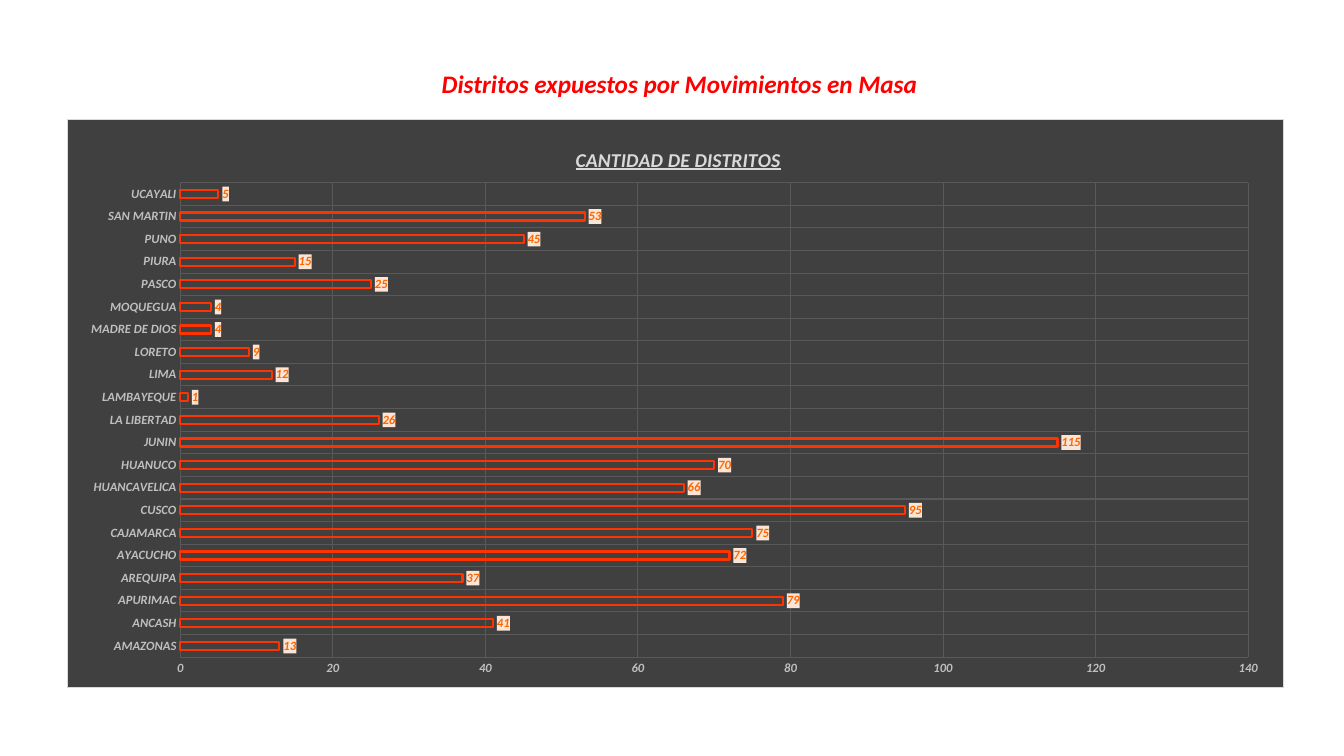
from dataclasses import dataclass

from lxml import etree
from pptx import Presentation
from pptx.chart.data import CategoryChartData
from pptx.dml.color import RGBColor
from pptx.enum.chart import XL_CHART_TYPE, XL_LABEL_POSITION, XL_TICK_MARK
from pptx.enum.text import MSO_ANCHOR, PP_ALIGN
from pptx.oxml import parse_xml
from pptx.oxml.ns import nsdecls, qn
from pptx.util import Cm, Pt

BAR = XL_CHART_TYPE.BAR_CLUSTERED
OUTSIDE_END = XL_LABEL_POSITION.OUTSIDE_END
NO_TICK = XL_TICK_MARK.NONE
MIDDLE = MSO_ANCHOR.MIDDLE
CENTER = PP_ALIGN.CENTER
TITLE_ONLY = 5

DISTRICTS = {
    "AMAZONAS": 13, "ANCASH": 41, "APURIMAC": 79, "AREQUIPA": 37,
    "AYACUCHO": 72, "CAJAMARCA": 75, "CUSCO": 95, "HUANCAVELICA": 66,
    "HUANUCO": 70, "JUNIN": 115, "LA LIBERTAD": 26, "LAMBAYEQUE": 1,
    "LIMA": 12, "LORETO": 9, "MADRE DE DIOS": 4, "MOQUEGUA": 4,
    "PASCO": 25, "PIURA": 15, "PUNO": 45, "SAN MARTIN": 53, "UCAYALI": 5,
}


@dataclass(frozen=True)
class Theme:
    font: str = "Calibri"
    title: str = "FF0000"
    panel: str = "404040"
    panel_edge: str = "D9D9D9"
    chart_title: str = "D9D9D9"
    axis_text: str = "BFBFBF"
    grid: str = "595959"
    bar: str = "FF3300"
    label: str = "FF6600"
    label_back: str = "FBE5D6"
    title_size: int = 18
    chart_title_size: int = 14
    small_size: int = 9
    hairline: float = 0.75
    bar_line: float = 1.5


def shape_properties(fill, edge=None, width=0):
    """Build a c:spPr with a solid fill and an optional outline."""
    solid = '<a:solidFill><a:srgbClr val="{}"/></a:solidFill>'
    line = solid.format(edge) if edge else "<a:noFill/>"
    return parse_xml(
        f'<c:spPr {nsdecls("c", "a")}>{solid.format(fill)}'
        f'<a:ln w="{Pt(width)}">{line}</a:ln></c:spPr>')


def set_layout(element, index, **values):
    """Give a chart part a manual layout in fractions of the chart."""
    for old in element.findall(qn("c:layout")):
        element.remove(old)
    layout = etree.Element(qn("c:layout"))
    manual = etree.SubElement(layout, qn("c:manualLayout"))
    for name, value in values.items():
        etree.SubElement(manual, qn(f"c:{name}")).set("val", str(value))
    element.insert(index, layout)


class SlideBuilder:
    def __init__(self, prs, theme):
        self.theme = theme
        self.slide = prs.slides.add_slide(prs.slide_layouts[TITLE_ONLY])

    def style_font(self, font, size, color):
        font.name, font.size = self.theme.font, Pt(size)
        font.bold = font.italic = True
        font.color.rgb = RGBColor.from_string(color)

    def style_line(self, line, color, width):
        line.color.rgb = RGBColor.from_string(color)
        line.width = Pt(width)

    def title(self, text, left, top, width, height):
        sp = self.slide.shapes.title
        sp.left, sp.top, sp.width, sp.height = map(Cm, (left, top, width, height))
        tf = sp.text_frame
        tf.text = text
        tf.word_wrap = False
        tf.vertical_anchor = MIDDLE
        p = tf.paragraphs[0]
        p.alignment = CENTER
        self.style_font(p.runs[0].font, self.theme.title_size, self.theme.title)

    def bar_chart(self, title, values, left, top, width, height):
        data = CategoryChartData(number_format="#,##0")
        data.categories = list(values)
        data.add_series(title, list(values.values()))
        box = map(Cm, (left, top, width, height))
        chart = self.slide.shapes.add_chart(BAR, *box, data).chart
        chart.has_legend = False
        chart.font.name = self.theme.font
        chart.font.size = Pt(10)
        chart.element.find(qn("c:chart")).addnext(shape_properties(
            self.theme.panel, self.theme.panel_edge, self.theme.hairline))
        set_layout(chart.element.find(".//" + qn("c:plotArea")), 0,
                   layoutTarget="inner", xMode="edge", yMode="edge",
                   x=0.093, y=0.111, w=0.878, h=0.835)
        self.chart_title(chart, title)
        for axis in (chart.category_axis, chart.value_axis):
            self.axis(axis)
        chart.value_axis.minimum_scale = 0
        chart.value_axis.maximum_scale = 140
        chart.value_axis.major_unit = 20
        self.bars(chart.plots[0])

    def chart_title(self, chart, text):
        tf = chart.chart_title.text_frame
        tf.text = text
        font = tf.paragraphs[0].runs[0].font
        self.style_font(font, self.theme.chart_title_size, self.theme.chart_title)
        font.underline = True
        set_layout(chart.element.find(".//" + qn("c:title")), 1,
                   xMode="edge", yMode="edge", x=0.415, y=0.04)

    def axis(self, axis):
        axis.major_tick_mark = axis.minor_tick_mark = NO_TICK
        axis.format.line.fill.background()
        axis.has_major_gridlines = True
        self.style_line(axis.major_gridlines.format.line,
                        self.theme.grid, self.theme.hairline)
        self.style_font(axis.tick_labels.font,
                        self.theme.small_size, self.theme.axis_text)

    def bars(self, plot):
        plot.gap_width, plot.overlap = 182, -50
        plot.vary_by_categories = False
        series = plot.series[0]
        series.format.fill.background()
        self.style_line(series.format.line, self.theme.bar, self.theme.bar_line)
        labels = series.data_labels
        labels.show_value = True
        labels.position = OUTSIDE_END
        labels.number_format = "#,##0"
        labels.number_format_is_linked = False
        self.style_font(labels.font, self.theme.small_size, self.theme.label)
        text_properties = series._element.find(
            qn("c:dLbls") + "/" + qn("c:txPr"))
        text_properties.addprevious(shape_properties(self.theme.label_back))


def main():
    prs = Presentation()
    prs.slide_width, prs.slide_height = Cm(33.87), Cm(19.05)
    builder = SlideBuilder(prs, Theme())
    builder.title("Distritos expuestos por Movimientos en Masa",
                  10.8, 1.6, 12.65, 1.02)
    builder.bar_chart("CANTIDAD DE DISTRITOS", DISTRICTS,
                      1.68, 3, 30.68, 14.35)
    prs.save("out.pptx")


if __name__ == "__main__":
    main()
